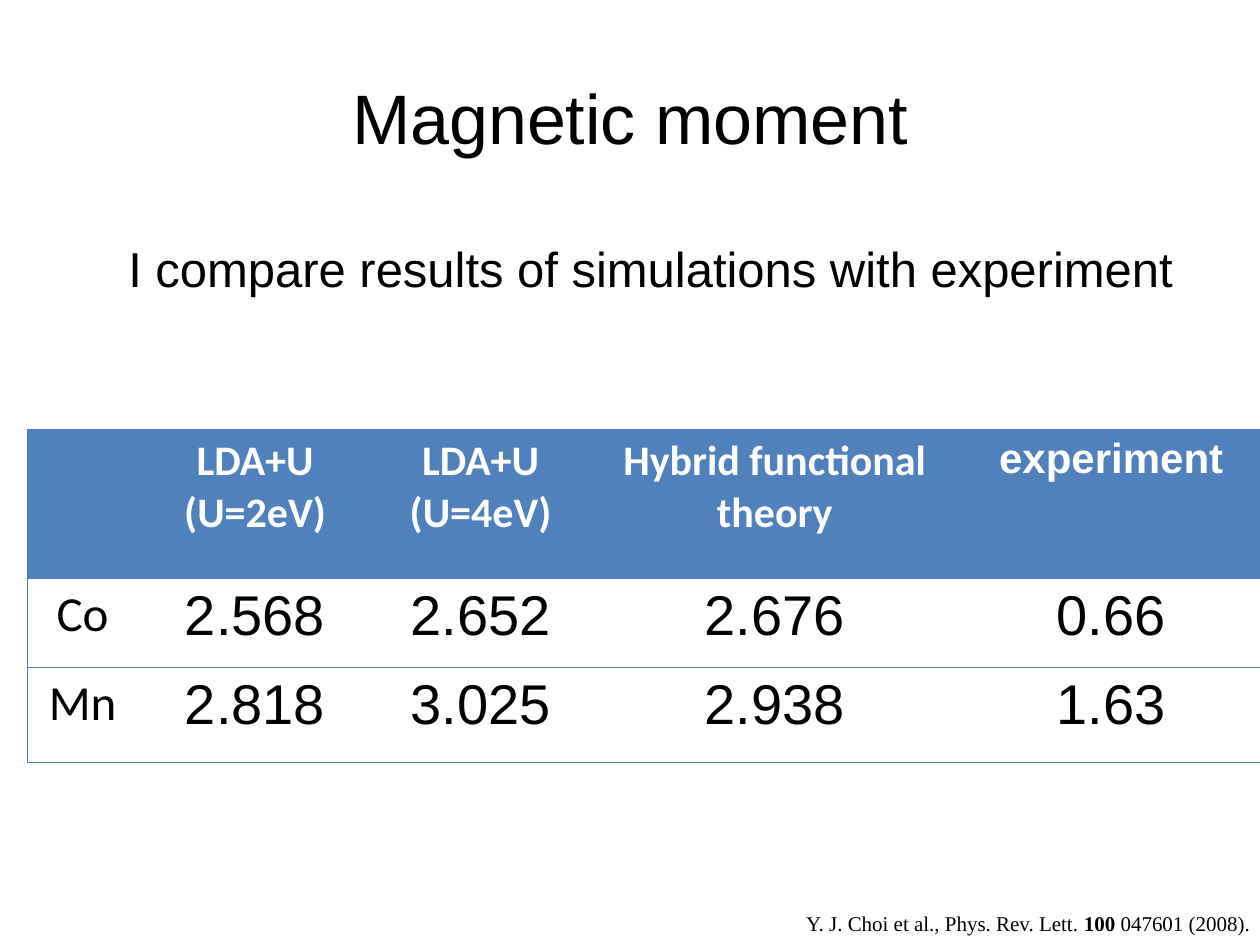
from lxml import etree
from pptx import Presentation
from pptx.dml.color import RGBColor
from pptx.enum.text import MSO_ANCHOR, PP_ALIGN
from pptx.oxml.ns import qn
from pptx.util import Inches, Pt

CENTER, LEFT = PP_ALIGN.CENTER, PP_ALIGN.LEFT
TOP, MIDDLE = MSO_ANCHOR.TOP, MSO_ANCHOR.MIDDLE
BLACK, WHITE, HEADER, BORDER = "000000", "FFFFFF", "4F81BD", "4B7EBC"

TITLE = "Magnetic moment"
INTRO = "I compare results of simulations with experiment"
CITATION = [
    ("Y. J. Choi et al., Phys. Rev. Lett. ", False),
    ("100 ", True),
    ("047601 (2008).", False),
]
ROWS = [
    ["", "LDA+U\n(U=2eV)", "LDA+U\n(U=4eV)", "Hybrid functional\ntheory", "experiment"],
    ["Co", "2.568", "2.652", "2.676", "0.66"],
    ["Mn", "2.818", "3.025", "2.938", "1.63"],
]
COL_WIDTHS = [0.87, 1.87, 1.71, 2.96, 2.38]
ROW_HEIGHTS = [1.18, 0.71, 0.75]


def rgb(color):
    return RGBColor.from_string(color)


def style(p, size, font, color=BLACK, bold=None, align=LEFT):
    p.alignment = align
    p.font.size = Pt(size)
    p.font.name = font
    p.font.color.rgb = rgb(color)
    p.font.bold = bold


def add_text(s, box, runs, size, font, align=LEFT, anchor=TOP, wrap=True):
    tf = s.shapes.add_textbox(*map(Inches, box)).text_frame
    tf.word_wrap = wrap
    tf.vertical_anchor = anchor
    p = tf.paragraphs[0]
    style(p, size, font, align=align)
    for text, bold in runs:
        r = p.add_run()
        r.text = text
        if bold:
            r.font.bold = True


def set_borders(cell, sides):
    tc_pr = cell._tc.get_or_add_tcPr()
    for i, side in enumerate("LRTB"):
        ln = etree.Element(qn(f"a:ln{side}"), w=str(Pt(0.75)))
        if side in sides:
            fill = etree.SubElement(ln, qn("a:solidFill"))
            etree.SubElement(fill, qn("a:srgbClr"), val=BORDER)
        else:
            etree.SubElement(ln, qn("a:noFill"))
        tc_pr.insert(i, ln)


def cell_style(row, col):
    if row == 0:
        return 24, "Arial" if col == len(COL_WIDTHS) - 1 else "Calibri", WHITE, True
    return (28, "Calibri", BLACK, False) if col == 0 else (32, "Arial", BLACK, False)


def add_moment_table(s):
    table = s.shapes.add_table(
        len(ROWS), len(COL_WIDTHS), Inches(0.22), Inches(3.41),
        Inches(sum(COL_WIDTHS)), Inches(sum(ROW_HEIGHTS)),
    ).table
    for column, width in zip(table.columns, COL_WIDTHS):
        column.width = Inches(width)
    for row, height in zip(table.rows, ROW_HEIGHTS):
        row.height = Inches(height)
    for i, texts in enumerate(ROWS):
        for j, text in enumerate(texts):
            cell = table.cell(i, j)
            cell.text = text
            cell.fill.solid()
            cell.fill.fore_color.rgb = rgb(WHITE if i else HEADER)
            for p in cell.text_frame.paragraphs:
                style(p, *cell_style(i, j), align=CENTER)
            sides = "TB" if i else "T"
            sides += "L" if j == 0 else ""
            sides += "R" if j == len(texts) - 1 else ""
            set_borders(cell, sides)


def main():
    prs = Presentation()
    prs.slide_width, prs.slide_height = Inches(10), Inches(7.5)
    s = prs.slides.add_slide(prs.slide_layouts[6])
    add_text(s, (0.5, 0.3, 9, 1.25), [(TITLE, False)], 40, "Arial", CENTER, MIDDLE)
    add_moment_table(s)
    add_text(s, (0.92, 1.84, 8.58, 0.57), [(INTRO, False)], 28, "Arial", wrap=False)
    add_text(s, (6.3, 7.18, 6.41, 0.3), CITATION, 12, "Times New Roman")
    prs.save("out.pptx")


if __name__ == "__main__":
    main()
